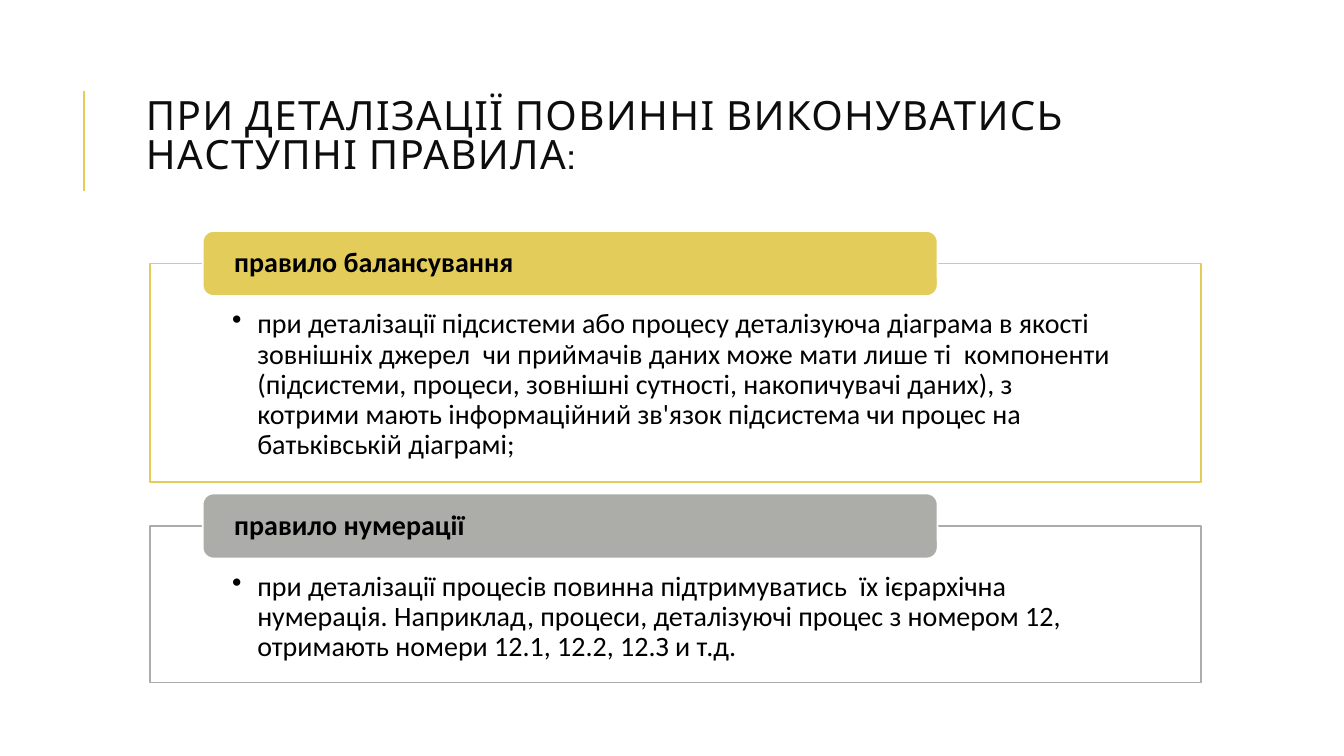
from lxml.etree import SubElement
from pptx import Presentation
from pptx.dml.color import RGBColor
from pptx.enum.shapes import MSO_CONNECTOR, MSO_SHAPE
from pptx.enum.text import MSO_ANCHOR, PP_ALIGN
from pptx.oxml.ns import qn
from pptx.util import Pt

PX = 9525
GOLD = RGBColor(0xE3, 0xCC, 0x5A)
GRAY = RGBColor(0xAC, 0xAD, 0xA8)
WHITE = RGBColor(0xFF, 0xFF, 0xFF)
BLACK = RGBColor(0, 0, 0)
INK = RGBColor(0x0D, 0x0D, 0x0D)

TITLE = "ПРИ ДЕТАЛІЗАЦІЇ ПОВИННІ ВИКОНУВАТИСЬ НАСТУПНІ ПРАВИЛА:"
RULES = [
    ("правило балансування",
     "при деталізації підсистеми або процесу деталізуюча діаграма в якості "
     "зовнішніх джерел  чи приймачів даних може мати лише ті  компоненти "
     "(підсистеми, процеси, зовнішні сутності, накопичувачі даних), з котрими "
     "мають інформаційний зв'язок підсистема чи процес на батьківській діаграмі;",
     GOLD, 251, 208),
    ("правило нумерації",
     "при деталізації процесів повинна підтримуватись  їх ієрархічна нумерація. "
     "Наприклад, процеси, деталізуючі процес з номером 12, отримають номери "
     "12.1, 12.2, 12.З и т.д.",
     GRAY, 501, 149),
]


def write(shape, text, font="Calibri", size=20, color=BLACK, bold=False,
          lead=0.9, track=0, pad=(10, 5, 10, 5), anchor=MSO_ANCHOR.MIDDLE,
          bullet=0):
    """Fill a shape with one formatted paragraph."""
    frame = shape.text_frame
    frame.word_wrap = True
    frame.vertical_anchor = anchor
    (frame.margin_left, frame.margin_top,
     frame.margin_right, frame.margin_bottom) = [n * PX for n in pad]
    para = frame.paragraphs[0]
    para.alignment = PP_ALIGN.LEFT
    para.line_spacing = lead
    run = para.add_run()
    run.text = text
    run.font.name = font
    run.font.size = Pt(size)
    run.font.bold = bold
    run.font.color.rgb = color
    if track:
        run.font._element.set("spc", str(track))
    if bullet:
        props = para._p.get_or_add_pPr()
        props.set("marL", str(bullet * PX))
        props.set("indent", str(-bullet * PX))
        SubElement(props, qn("a:buChar")).set("char", "•")


def panel(slide, kind, box, fill, line):
    """Add a filled and outlined shape."""
    shape = slide.shapes.add_shape(kind, *[n * PX for n in box])
    shape.shadow.inherit = False
    shape.fill.solid()
    shape.fill.fore_color.rgb = fill
    shape.line.color.rgb = line
    shape.line.width = Pt(1.25)
    return shape


def header(slide, left, top, width, height):
    """Place the accent line and the title to its right."""
    x = left * PX
    line = slide.shapes.add_connector(
        MSO_CONNECTOR.STRAIGHT, x, (top + height) * PX, x, top * PX)
    line.line.color.rgb = GOLD
    line.line.width = Pt(1.5)
    SubElement(line._element.spPr, qn("a:effectLst"))
    box = slide.shapes.add_textbox(
        (left + 49) * PX, top * PX, (width - 49) * PX, (height - 6) * PX)
    write(box, TITLE, font="Cabin", size=28.8, color=INK, lead=0.8, track=100)


def rule(slide, name, text, color, left, top, width, height):
    """Place a framed rule with its name on a tab over the top edge."""
    frame = panel(slide, MSO_SHAPE.RECTANGLE, (left, top, width, height),
                  WHITE, color)
    write(frame, text, pad=(78, 44, 78, 15), anchor=MSO_ANCHOR.TOP, bullet=24)
    tab = panel(slide, MSO_SHAPE.ROUNDED_RECTANGLE,
                (left + 50, top - 31, width * 7 // 10, 62), color, WHITE)
    write(tab, name, bold=True, pad=(27, 0, 27, 0))


def main():
    """Build and save the slide."""
    deck = Presentation()
    deck.slide_width = 1280 * PX
    deck.slide_height = 720 * PX
    slide = deck.slides.add_slide(deck.slide_layouts[6])
    header(slide, 80, 87, 1042, 95)
    for name, text, color, top, height in RULES:
        rule(slide, name, text, color, 143, top, 1001, height)
    deck.save("out.pptx")


if __name__ == "__main__":
    main()
